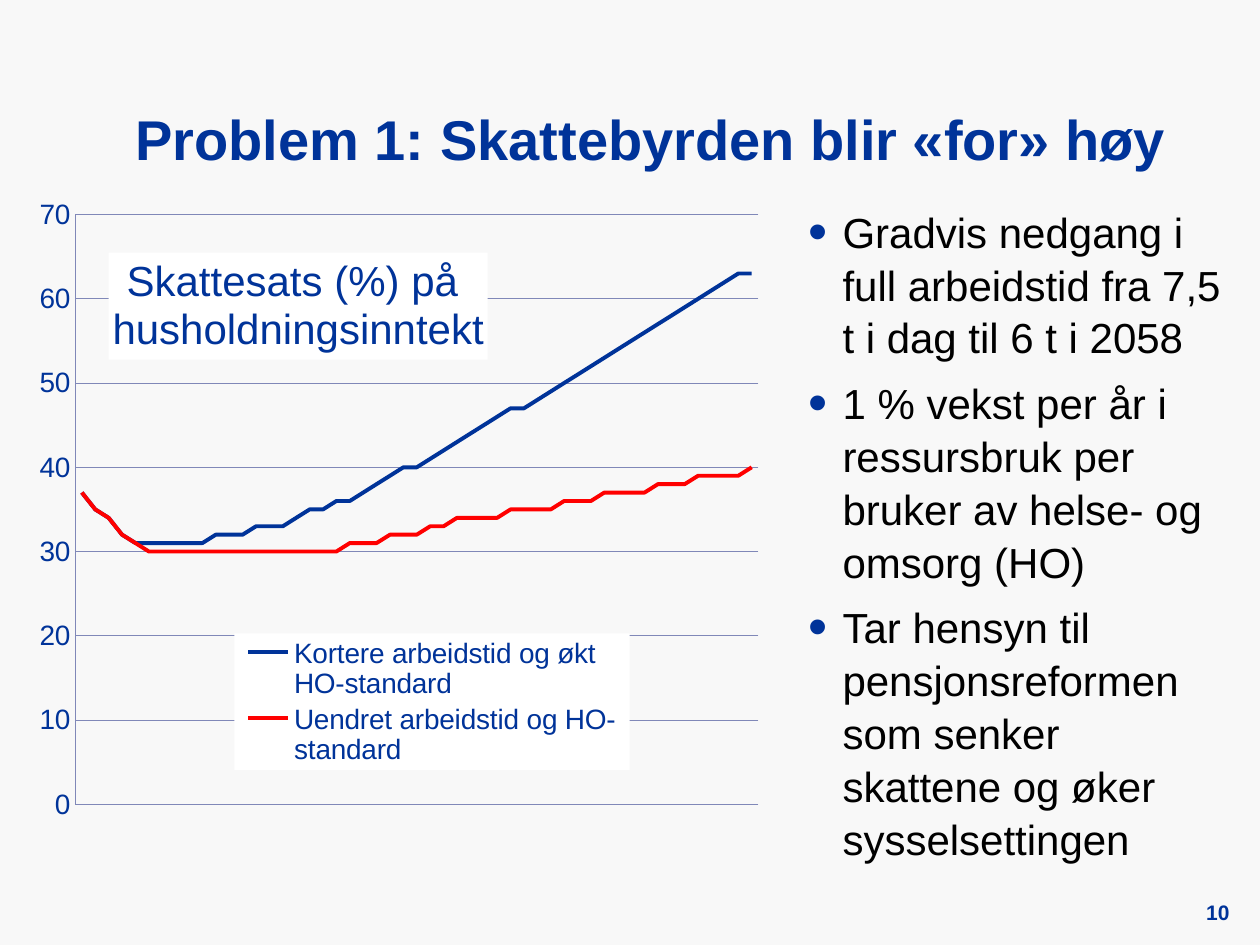
from pptx import Presentation
from pptx.chart.data import CategoryChartData as Data
from pptx.dml.color import RGBColor
from pptx.enum.chart import XL_CHART_TYPE as Kind, XL_LEGEND_POSITION as Side
from pptx.enum.chart import XL_TICK_LABEL_POSITION as Label, XL_TICK_MARK as Tick
from pptx.enum.text import MSO_ANCHOR as Anchor, PP_ALIGN as Align
from pptx.oxml import parse_xml
from pptx.oxml.ns import nsdecls, qn
from pptx.util import Inches, Pt

BLUE, RED, BLACK, WHITE, PALE, GRID = "003399", "FF0000", "000000", "FFFFFF", "F8F8F8", "8088B8"
YEARS = [str(year) for year in range(2010, 2061)]
RATES = [
    ("Kortere arbeidstid og økt HO-standard", BLUE,
     [37, 35, 34, 32, 31, 31, 31, 31, 31, 31, 32, 32, 32, 33, 33, 33, 34,
      35, 35, 36, 36, 37, 38, 39, 40, 40, 41, 42, 43, 44, 45, 46, 47, 47,
      48, 49, 50, 51, 52, 53, 54, 55, 56, 57, 58, 59, 60, 61, 62, 63, 63]),
    ("Uendret arbeidstid og HO-standard", RED,
     [37, 35, 34, 32, 31, 30, 30, 30, 30, 30, 30, 30, 30, 30, 30, 30, 30,
      30, 30, 30, 31, 31, 31, 32, 32, 32, 33, 33, 34, 34, 34, 34, 35, 35,
      35, 35, 36, 36, 36, 37, 37, 37, 37, 38, 38, 38, 39, 39, 39, 39, 40]),
]
POINTS = [
    "Gradvis nedgang i full arbeidstid fra 7,5 t i dag til 6 t i 2058",
    "1 % vekst per år i ressursbruk per bruker av helse- og omsorg (HO)",
    "Tar hensyn til pensjonsreformen som senker skattene og øker sysselsettingen",
]


def tint(code):
    return RGBColor.from_string(code)


def style(font, size, color=BLUE, bold=False):
    font.name, font.size, font.bold = "Arial", Pt(size), bold
    font.color.rgb = tint(color)


def place(x, y, w=None, h=None, inner=False):
    parts = [("layoutTarget", "inner")] if inner else []
    parts += [("xMode", "edge"), ("yMode", "edge")]
    parts += [(key, val) for key, val in zip("xywh", (x, y, w, h)) if val is not None]
    body = "".join(f'<c:{key} val="{val}"/>' for key, val in parts)
    return parse_xml(f'<c:layout {nsdecls("c")}><c:manualLayout>{body}</c:manualLayout></c:layout>')


def swap(node, layout, prior=None):
    for old in node.findall(qn("c:layout")):
        node.remove(old)
    if prior is None:
        node.insert(0, layout)
    else:
        node.find(qn(prior)).addnext(layout)


class Deck:
    """Holds the style and the current slide on a grid of 120 columns by 90 rows."""

    def __init__(self):
        self.show = Presentation()
        self.show.slide_width, self.show.slide_height = Inches(10), Inches(7.5)
        self.slide = self.show.slides.add_slide(self.show.slide_layouts[6])
        fill = self.slide.background.fill
        fill.solid()
        fill.fore_color.rgb = tint(PALE)

    def cells(self, *spans):
        return [Inches(span / 12) for span in spans]

    def text(self, spot, lines, size, color=BLUE, bold=False, align=Align.LEFT, anchor=Anchor.TOP):
        frame = self.slide.shapes.add_textbox(*self.cells(*spot)).text_frame
        frame.word_wrap, frame.vertical_anchor = True, anchor
        frame.margin_left = frame.margin_right = frame.margin_top = frame.margin_bottom = 0
        frame.text = "\n".join(lines)
        for para in frame.paragraphs:
            para.alignment = align
            for run in para.runs:
                style(run.font, size, color, bold)
        return frame

    def bullets(self, spot, lines, size):
        frame = self.text(spot, lines, size, BLACK)
        for rank, para in enumerate(frame.paragraphs):
            para.line_spacing = 1.05
            para.space_before = Pt(0.3 * size if rank else 0)
            props = para._p.get_or_add_pPr()
            props.set("marL", str(Inches(0.27)))
            props.set("indent", str(-Inches(0.27)))
            for tag in (f'buClr {nsdecls("a")}><a:srgbClr val="{BLUE}"/></a:buClr',
                        f'buSzPct {nsdecls("a")} val="130000"/',
                        f'buFont {nsdecls("a")} typeface="Arial"/',
                        f'buChar {nsdecls("a")} char="•"/'):
                props.append(parse_xml(f"<a:{tag}>"))

    def lines(self, spot, title, cats, rows):
        data = Data(number_format="0")
        data.categories = cats
        for name, _, vals in rows:
            data.add_series(name, vals)
        chart = self.slide.shapes.add_chart(Kind.LINE, *self.cells(*spot), data).chart
        style(chart.font, 10)
        chart.plots[0].vary_by_categories = False
        for series, (_, color, _) in zip(chart.plots[0].series, rows):
            series.smooth = False
            series.format.line.color.rgb = tint(color)
            series.format.line.width = Pt(2.25)
        swap(chart._chartSpace.chart.plotArea, place(0.053, 0.029, 0.918, 0.886, True))
        self.axes(chart)
        self.key(chart)
        self.head(chart, title)

    def axes(self, chart):
        base, scale = chart.category_axis, chart.value_axis
        base.tick_label_position = Label.NONE
        scale.minimum_scale, scale.maximum_scale, scale.major_unit = 0, 70, 10
        scale.tick_labels.number_format = "0"
        scale.tick_labels.number_format_is_linked = False
        scale.has_major_gridlines = True
        for axis in (base, scale):
            axis.major_tick_mark = axis.minor_tick_mark = Tick.NONE
            style(axis.tick_labels.font, 16)
        for part in (base, scale, scale.major_gridlines):
            part.format.line.color.rgb = tint(GRID)
            part.format.line.width = Pt(0.5)

    def key(self, chart):
        chart.has_legend = True
        legend = chart.legend
        legend.position, legend.include_in_layout = Side.RIGHT, False
        style(legend.font, 16)
        node = legend._element
        swap(node, place(0.267, 0.658, 0.531, 0.205), "c:legendPos")
        node.find(qn("c:overlay")).addnext(parse_xml(
            f'<c:spPr {nsdecls("c", "a")}><a:solidFill><a:srgbClr val="{WHITE}"/>'
            '</a:solidFill><a:ln><a:noFill/></a:ln></c:spPr>'))

    def head(self, chart, words):
        chart.has_title = True
        title = chart.chart_title
        title.include_in_layout = True
        title.text_frame.text = words
        for para in title.text_frame.paragraphs:
            para.alignment = Align.CENTER
            style(para.font, 24)
            for run in para.runs:
                style(run.font, 24)
        title.format.fill.solid()
        title.format.fill.fore_color.rgb = tint(WHITE)
        swap(title._element, place(0.098, 0.086), "c:tx")


def main():
    deck = Deck()
    deck.text((7, 10, 110, 7.5), ["Problem 1: Skattebyrden blir «for» høy"], 32,
              bold=True, align=Align.CENTER)
    deck.bullets((77, 19.4, 40, 64.6), POINTS, 24)
    deck.text((111, 85.3, 6.1, 3.1), ["10"], 12, bold=True, align=Align.RIGHT, anchor=Anchor.MIDDLE)
    deck.lines((3.4, 18.6, 70.9, 63.4), "Skattesats (%) på \nhusholdningsinntekt", YEARS, RATES)
    deck.show.save("out.pptx")


if __name__ == "__main__":
    main()
